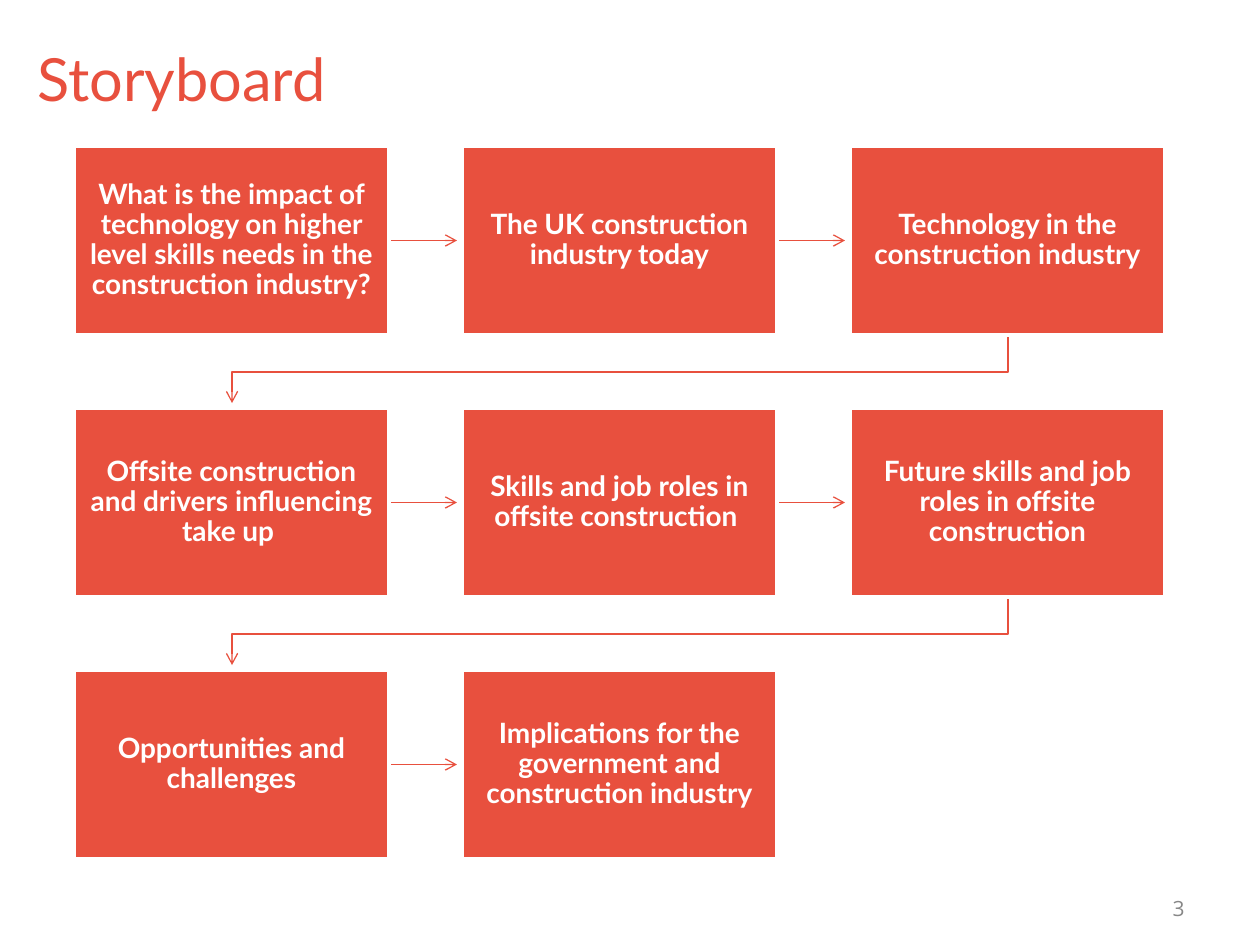
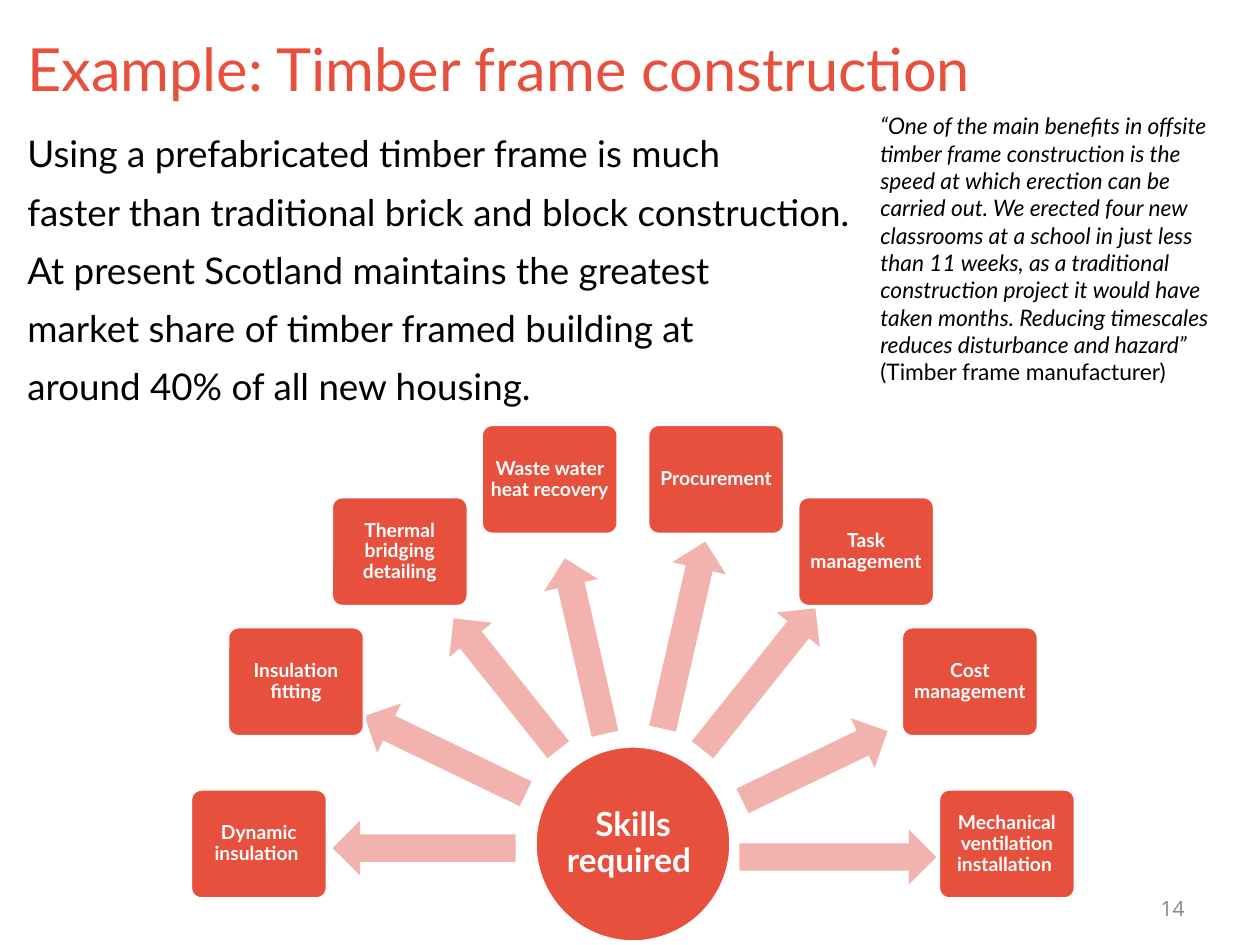
import math
import lxml.etree
import pptx
import pptx.dml.color
import pptx.enum.shapes
import pptx.enum.text
import pptx.oxml.ns
import pptx.util

MSO = pptx.enum.shapes.MSO_SHAPE
ALIGN = pptx.enum.text.PP_ALIGN
ANCHOR = pptx.enum.text.MSO_ANCHOR
RED = pptx.dml.color.RGBColor(0xE8, 0x50, 0x3E)
PINK = pptx.dml.color.RGBColor(0xF2, 0xB3, 0xAF)
WHITE = pptx.dml.color.RGBColor(0xFF, 0xFF, 0xFF)
BLACK = pptx.dml.color.RGBColor(0x00, 0x00, 0x00)
GREY = pptx.dml.color.RGBColor(0x87, 0x87, 0x87)
EMU_PER_PX = 914400 / 126

STORY = [
    "What is the impact of technology on higher level skills needs in the construction industry?",
    "The UK construction industry today",
    "Technology in the construction industry",
    "Offsite construction and drivers influencing take up ",
    "Skills and job roles in offsite construction ",
    "Future skills and job roles in offsite construction",
    "Opportunities and challenges",
    "Implications for the government and construction industry",
]
STORY_COLS = 3
STORY_LEFT, STORY_TOP = 74, 146
STORY_W, STORY_H = 315, 189
STORY_DX, STORY_DY = 388, 262

TIMBER_LINES = [
    "Using a prefabricated timber frame is much",
    "faster than traditional brick and block construction.",
    "At present Scotland maintains the greatest",
    "market share of timber framed building at",
    "around 40% of all new housing.",
]
QUOTE = (
    "“One of the main benefits in offsite timber frame construction is the speed "
    "at which erection can be carried out. We erected four new classrooms at a school "
    "in just less than 11 weeks, as a traditional construction project it would have "
    "taken months. Reducing timescales reduces disturbance and hazard” "
)
QUOTE_SOURCE = "(Timber frame manufacturer)"

HUB = "Skills required "
HUB_X, HUB_Y, HUB_D = 633, 844, 196
RADIUS = 374
SKILL_W, SKILL_H = 137, 110
ARROW_H = 55
# skill, arrow centre x, arrow centre y, arrow length
SKILLS = [
    ("Dynamic insulation ", 424, 848, 183),
    ("Insulation fitting", 445, 755, 179),
    ("Thermal bridging detailing", 506, 684, 168),
    ("Waste water heat recovery", 585, 646, 180),
    ("Procurement", 684, 635, 192),
    ("Task management", 759, 679, 181),
    ("Cost management", 815, 766, 161),
    ("Mechanical ventilation installation ", 838, 857, 197),
]


def px(n):
    return pptx.util.Emu(round(n * EMU_PER_PX))


def style(p, size, color, font="Lato", bold=False):
    for r in p.runs:
        r.font.name = font
        r.font.size = pptx.util.Pt(size)
        r.font.color.rgb = color
        r.font.bold = bold


def add_text(s, x, y, w, h, lines, size, color=BLACK):
    tf = s.shapes.add_textbox(px(x), px(y), px(w), px(h)).text_frame
    tf.word_wrap = True
    tf.text = "\n".join(lines)
    for p in tf.paragraphs:
        p.space_before = pptx.util.Pt(8)
        style(p, size, color)
    return tf


def add_slide(prs, title, x, y, number):
    s = prs.slides.add_slide(prs.slide_layouts[6])
    add_text(s, x, y, 1201, 118, [title], 34, RED)
    tf = add_text(s, 1124, 890, 73, 37, [number], 12)
    tf.vertical_anchor = ANCHOR.MIDDLE
    p = tf.paragraphs[0]
    p.space_before = pptx.util.Pt(0)
    p.alignment = ALIGN.RIGHT
    style(p, 12, GREY, "Open Sans")
    return s


def add_node(s, kind, x, y, w, h, text, size, inset):
    sp = s.shapes.add_shape(kind, px(x), px(y), px(w), px(h))
    sp.shadow.inherit = False
    sp.fill.solid()
    sp.fill.fore_color.rgb = RED
    sp.line.color.rgb = WHITE
    sp.line.width = pptx.util.Pt(2)
    tf = sp.text_frame
    tf.word_wrap = True
    tf.vertical_anchor = ANCHOR.MIDDLE
    tf.margin_left = tf.margin_right = tf.margin_top = tf.margin_bottom = px(inset)
    tf.text = text
    p = tf.paragraphs[0]
    p.alignment = ALIGN.CENTER
    p.line_spacing = 0.9
    style(p, size, WHITE, bold=True)
    return sp


def style_arrow(sp):
    sp.line.color.rgb = RED
    sp.line.width = pptx.util.Pt(0.75)
    qn = pptx.oxml.ns.qn
    spPr = sp._element.spPr
    lxml.etree.SubElement(spPr.find(qn("a:ln")), qn("a:tailEnd"), type="arrow")
    if spPr.find(qn("a:effectLst")) is None:
        lxml.etree.SubElement(spPr, qn("a:effectLst"))


def add_next_arrow(s, x, y):
    mid = y + STORY_H / 2
    sp = s.shapes.add_connector(
        pptx.enum.shapes.MSO_CONNECTOR.STRAIGHT,
        px(x + STORY_W), px(mid), px(x + STORY_DX - 5), px(mid))
    style_arrow(sp)


def add_row_arrow(s, x, y):
    start, end = x + STORY_W / 2, STORY_LEFT + STORY_W / 2
    bottom = y + STORY_H
    turn = bottom + 37
    fb = s.shapes.build_freeform(start, bottom, EMU_PER_PX)
    fb.add_line_segments(
        [(start, turn), (end, turn), (end, y + STORY_DY - 5)], close=False)
    sp = fb.convert_to_shape()
    sp.fill.background()
    sp.shadow.inherit = False
    style_arrow(sp)


def build_storyboard(prs):
    s = add_slide(prs, "Storyboard", 25, 36, "3")
    for i, text in enumerate(STORY):
        row, col = divmod(i, STORY_COLS)
        x, y = STORY_LEFT + col * STORY_DX, STORY_TOP + row * STORY_DY
        if i < len(STORY) - 1:
            if col < STORY_COLS - 1:
                add_next_arrow(s, x, y)
            else:
                add_row_arrow(s, x, y)
        add_node(s, MSO.RECTANGLE, x, y, STORY_W, STORY_H, text, 16, 15)


def build_timber(prs):
    s = add_slide(prs, "Example: Timber frame construction", 15, 26, "14")
    add_text(s, 15, 125, 1201, 774, TIMBER_LINES, 21)
    p = add_text(s, 868, 106, 357, 307, [QUOTE], 13).paragraphs[0]
    p.runs[0].font.italic = True
    p.add_run().text = QUOTE_SOURCE
    style(p, 13, BLACK)

    add_node(s, MSO.OVAL, HUB_X - HUB_D / 2, HUB_Y - HUB_D / 2, HUB_D, HUB_D, HUB, 19, 1)
    step = 180 / (len(SKILLS) - 1)
    for i, (text, cx, cy, length) in enumerate(SKILLS):
        angle = 180 + i * step
        sp = s.shapes.add_shape(
            MSO.RIGHT_ARROW, px(cx - length / 2), px(cy - ARROW_H / 2), px(length), px(ARROW_H))
        sp.rotation = angle % 360
        sp.shadow.inherit = False
        sp.fill.solid()
        sp.fill.fore_color.rgb = PINK
        sp.line.fill.background()
        x = HUB_X + RADIUS * math.cos(math.radians(angle)) - SKILL_W / 2
        y = HUB_Y + RADIUS * math.sin(math.radians(angle)) - SKILL_H / 2
        sp = add_node(s, MSO.ROUNDED_RECTANGLE, x, y, SKILL_W, SKILL_H, text, 11, 2)
        sp.adjustments[0] = 0.1


def main():
    prs = pptx.Presentation()
    prs.slide_width, prs.slide_height = px(1260), px(945)
    build_storyboard(prs)
    build_timber(prs)
    prs.save("out.pptx")


if __name__ == "__main__":
    main()
